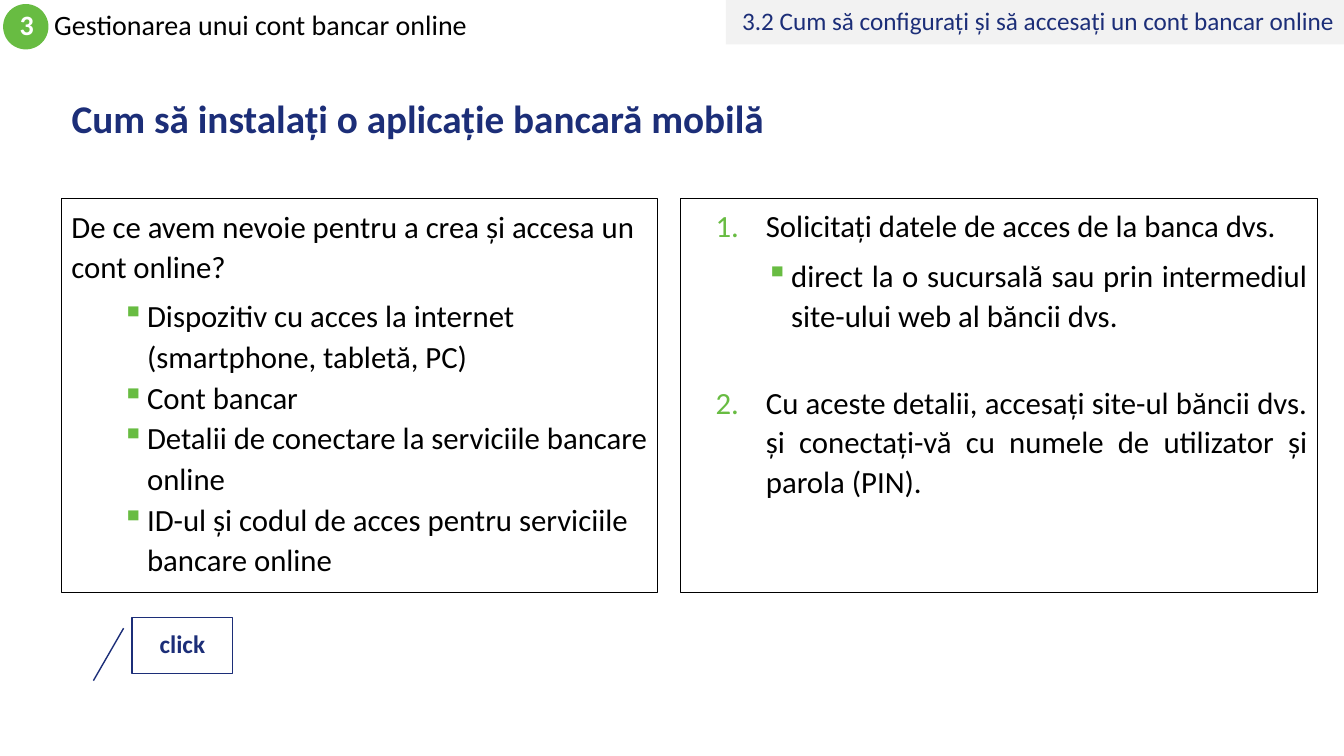
from lxml.etree import SubElement
from pptx import Presentation
from pptx.dml.color import RGBColor
from pptx.enum.shapes import MSO_SHAPE
from pptx.enum.text import MSO_ANCHOR, MSO_AUTO_SIZE, PP_ALIGN
from pptx.oxml.ns import qn
from pptx.util import Pt

NAVY, GREEN, BLACK, WHITE, GREY = "1C2E78", "68BC42", "000000", "FFFFFF", "F2F2F2"


def paint(color, value):
    color.rgb = RGBColor.from_string(value)


class Deck:
    """Holds the style and the current slide."""

    face = "Calibri"

    def __init__(self, wide, high):
        self.show = Presentation()
        self.show.slide_width, self.show.slide_height = Pt(wide), Pt(high)
        self.slide = self.show.slides.add_slide(self.show.slide_layouts[5])

    def frame(self, shape, anchor=MSO_ANCHOR.MIDDLE):
        frame = shape.text_frame
        frame.word_wrap = True
        frame.auto_size = MSO_AUTO_SIZE.NONE
        frame.vertical_anchor = anchor
        return frame

    def fill_in(self, para, text, size, color=BLACK, bold=False,
                align=PP_ALIGN.LEFT, lead=0.9, before=0):
        para.text = text
        para.alignment = align
        para.line_spacing = lead
        para.space_before = Pt(before)
        para.font.name = self.face
        para.font.size = Pt(size)
        para.font.bold = bold
        paint(para.font.color, color)

    def title(self, box, text):
        shape = self.slide.shapes.title
        shape.left, shape.top, shape.width, shape.height = map(Pt, box)
        self.fill_in(self.frame(shape).paragraphs[0], text, 28, NAVY, True)

    def label(self, box, text, size):
        shape = self.slide.shapes.add_textbox(*map(Pt, box))
        self.fill_in(self.frame(shape).paragraphs[0], text, size)

    def shape(self, kind, box, fill=None, line=None, width=1):
        shape = self.slide.shapes.add_shape(kind, *map(Pt, box))
        shape.shadow.inherit = False
        if fill:
            shape.fill.solid()
            paint(shape.fill.fore_color, fill)
        else:
            shape.fill.background()
        if line:
            paint(shape.line.color, line)
            shape.line.width = Pt(width)
        else:
            shape.line.fill.background()
        return shape

    def badge(self, kind, box, text, size, color, fill, line=None,
              bold=True, align=PP_ALIGN.CENTER):
        shape = self.shape(kind, box, fill, line)
        self.fill_in(self.frame(shape).paragraphs[0], text, size, color, bold, align)

    def mark(self, para, sign, left, hang):
        props = para._p.get_or_add_pPr()
        props.set("marL", str(Pt(left)))
        props.set("indent", str(Pt(-hang)))
        tint = SubElement(props, qn("a:buClr"))
        SubElement(tint, qn("a:srgbClr"), val=GREEN)
        if sign == "1.":
            SubElement(props, qn("a:buAutoNum"), type="arabicPeriod")
        else:
            SubElement(props, qn("a:buChar"), char=sign)

    def panel(self, box, items, align, lead):
        shape = self.shape(MSO_SHAPE.RECTANGLE, box, line=BLACK, width=0.75)
        frame = self.frame(shape, MSO_ANCHOR.TOP)
        for num, (text, sign, left, hang, before) in enumerate(items):
            para = frame.add_paragraph() if num else frame.paragraphs[0]
            if sign:
                self.mark(para, sign, left, hang)
            para.level = int(sign == "▪")
            self.fill_in(para, text, 22, align=align, lead=lead, before=before)


def main():
    deck = Deck(960, 540)
    deck.title((44, 62.6, 897, 47.5), "Cum să instalați o aplicație bancară mobilă")
    deck.label((31.7, 2.9, 576, 32.4), "Gestionarea unui cont bancar online", 20)
    deck.badge(MSO_SHAPE.OVAL, (2.2, 2.9, 32.4, 32.4), "3", 20, WHITE, GREEN)
    deck.badge(MSO_SHAPE.RECTANGLE, (518.4, 0, 441.6, 31.7),
               "3.2 Cum să configurați și să accesați un cont bancar online",
               18, NAVY, GREY, bold=False, align=PP_ALIGN.RIGHT)
    needs = [
        ("De ce avem nevoie pentru a crea și accesa un cont online?", "", 0, 0, 0),
        ("Dispozitiv cu acces la internet (smartphone, tabletă, PC)", "▪", 54, 18, 6),
        ("Cont bancar", "▪", 54, 18, 0),
        ("Detalii de conectare la serviciile bancare online", "▪", 54, 18, 0),
        ("ID-ul și codul de acces pentru serviciile bancare online", "▪", 54, 18, 0),
    ]
    steps = [
        ("Solicitați datele de acces de la banca dvs.", "1.", 54, 36, 0),
        ("direct la o sucursală sau prin intermediul site-ului web al băncii dvs.",
         "▪", 72, 18, 8),
        ("Cu aceste detalii, accesați site-ul băncii dvs. și conectați-vă cu numele "
         "de utilizator și parola (PIN).", "1.", 54, 36, 34),
    ]
    deck.panel((44, 142, 426, 281.5), needs, PP_ALIGN.LEFT, 1.1)
    deck.panel((486, 142, 455, 281.5), steps, PP_ALIGN.JUSTIFY, 1.07)
    deck.badge(MSO_SHAPE.LINE_CALLOUT_1, (94.3, 441.2, 72, 40), "click", 18,
               NAVY, WHITE, NAVY)
    deck.show.save("out.pptx")


if __name__ == "__main__":
    main()
